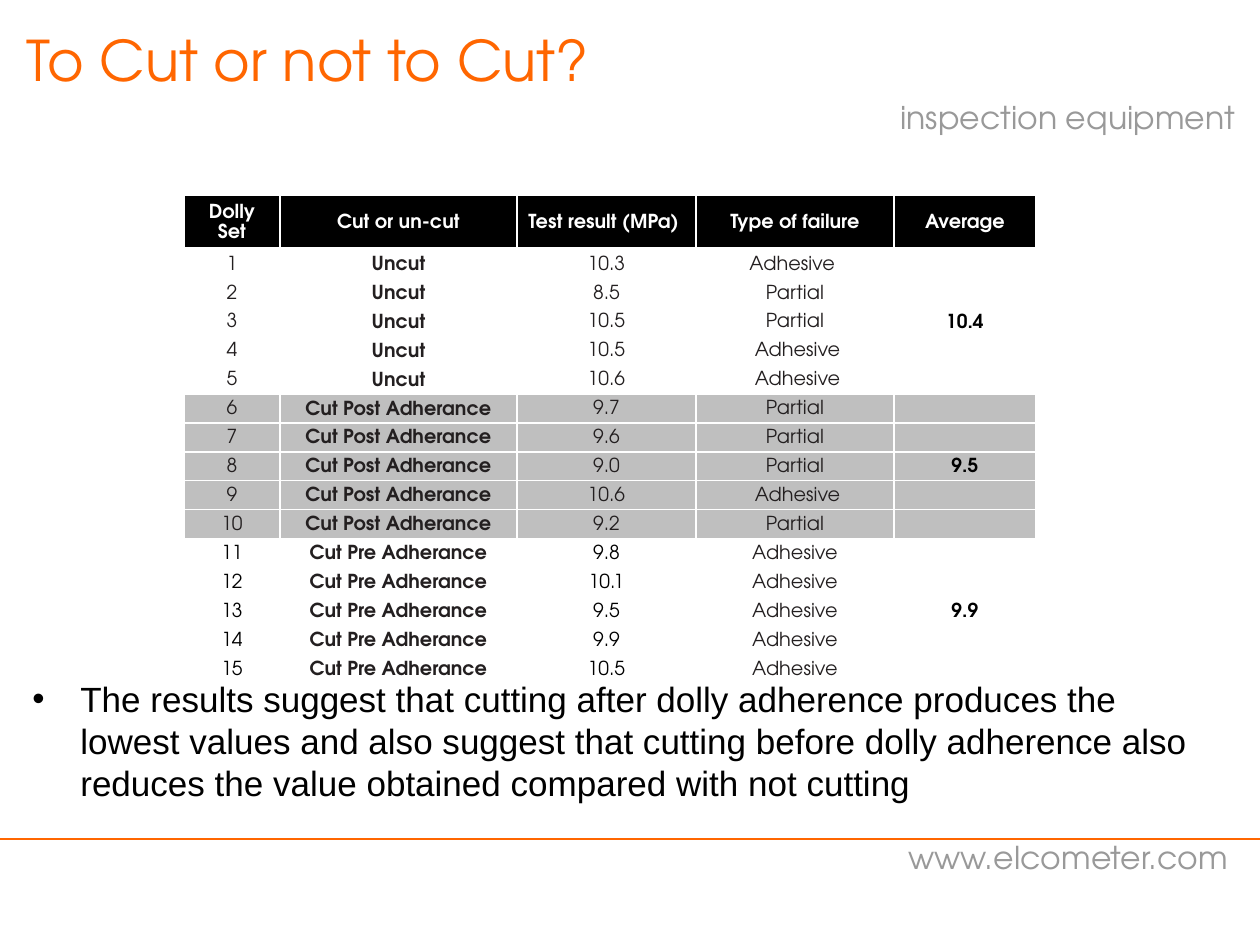
from lxml import etree
from pptx import Presentation
from pptx import util as u
from pptx.dml.color import RGBColor
from pptx.enum import shapes, text
from pptx.oxml.ns import qn

PX = 914400 // 126
SANS, BODY = "TeX Gyre Adventor", "Arial"
COLOURS = {
    "orange": "FF6600", "grey": "999999", "ink": "231F20",
    "black": "000000", "white": "FFFFFF", "band": "BFBFBF",
}


def rgb(name):
    return RGBColor.from_string(COLOURS[name])


def write(paragraph, words, size, colour, font=SANS, bold=False):
    run = paragraph.add_run()
    run.text = words
    run.font.color.rgb = rgb(colour)
    for key, value in {"name": font, "size": u.Pt(size), "bold": bold}.items():
        setattr(run.font, key, value)


prs = Presentation()
prs.slide_width, prs.slide_height = 1260 * PX, 945 * PX
slide = prs.slides.add_slide(prs.slide_layouts[5])

# Strapline and web address
for words, left, top in [("inspection equipment", 888, 92), ("www.elcometer.com", 896, 832)]:
    strap = slide.shapes.add_textbox(left * PX, top * PX, 374 * PX, 68 * PX)
    write(strap.text_frame.paragraphs[0], words, 18, "grey")

# Footer rule
rule = slide.shapes.add_connector(
    shapes.MSO_CONNECTOR.STRAIGHT, 1260 * PX, 839 * PX, 0, 839 * PX)
rule.line.color.rgb = rgb("orange")
rule.line.width = u.Pt(0.75)
etree.SubElement(rule._element.spPr, qn("a:effectLst"))

# Title
title = slide.shapes.title
for key, value in {"left": 14, "top": 16, "width": 1234, "height": 149}.items():
    setattr(title, key, value * PX)
title.text_frame.vertical_anchor = text.MSO_ANCHOR.TOP
title.text_frame.margin_top = 9 * PX
heading = title.text_frame.paragraphs[0]
heading.alignment = text.PP_ALIGN.LEFT
write(heading, "To Cut or not to Cut?", 32, "orange")

# Conclusion
conclusion = slide.shapes.add_textbox(20 * PX, 671 * PX, 1211 * PX, 140 * PX)
conclusion.text_frame.word_wrap = True
finding = conclusion.text_frame.paragraphs[0]
indent = finding._p.get_or_add_pPr()
indent.set("marL", str(48 * PX))
indent.set("indent", str(-48 * PX))
etree.SubElement(indent, qn("a:buFont")).set("typeface", BODY)
etree.SubElement(indent, qn("a:buChar")).set("char", "•")
write(finding, "The results suggest that cutting after dolly adherence produces the "
      "lowest values and also suggest that cutting before dolly adherence also "
      "reduces the value obtained compared with not cutting", 20, "black", BODY)

# Results: treatment, average, row fill, number colour, (result, failure) per dolly
header = ["Dolly Set", "Cut or un-cut", "Test result (MPa) ", "Type of failure", "Average"]
groups = [
    ("Uncut", "10.4", "white", "ink",
     [("10.3", "Adhesive "), ("8.5", "Partial"), ("10.5", "Partial"),
      ("10.5", " Adhesive"), ("10.6", " Adhesive")]),
    ("Cut Post Adherance", "9.5", "band", "ink",
     [("9.7", "Partial"), ("9.6", "Partial"), ("9.0", "Partial"),
      ("10.6", " Adhesive"), ("9.2", "Partial")]),
    ("Cut Pre Adherance", "9.9", "white", "black",
     [("9.8", "Adhesive"), ("10.1", "Adhesive"), ("9.5", "Adhesive"),
      ("9.9", "Adhesive"), ("10.5", "Adhesive")]),
]
rows = [(header, "black", ["white"] * 5)]
for treatment, average, fill, number, tests in groups:
    for i, (result, failure) in enumerate(tests):
        values = [str(len(rows)), treatment, result, failure, average if i == 2 else ""]
        rows.append((values, fill, [number, "ink", number, "ink", "black"]))

# Results table
widths = [96, 237, 179, 198, 142]
heights = [54] + [29] * (len(rows) - 1)
results = slide.shapes.add_table(
    len(rows), len(widths), 184 * PX, 195 * PX, sum(widths) * PX, sum(heights) * PX).table
for column, width in zip(results.columns, widths):
    column.width = width * PX
for r, (values, fill, colours) in enumerate(rows):
    results.rows[r].height = heights[r] * PX
    for c, (value, colour) in enumerate(zip(values, colours)):
        cell = results.cell(r, c)
        for key, setting in {"margin_left": 9 * PX, "margin_right": 9 * PX,
                             "margin_top": 0, "margin_bottom": 0,
                             "vertical_anchor": text.MSO_ANCHOR.MIDDLE}.items():
            setattr(cell, key, setting)
        entry = cell.text_frame.paragraphs[0]
        entry.alignment = text.PP_ALIGN.CENTER
        entry.line_spacing = 1.15
        if value:
            write(entry, value, 11, colour, bold=r == 0 or c in (1, 4))
        else:
            etree.SubElement(entry._p, qn("a:endParaRPr")).set("sz", "1100")
        # Borders come before the fill in the cell properties
        for side in ("lnL", "lnR", "lnT", "lnB"):
            heavy = (r, side) in ((0, "lnB"), (1, "lnT"))
            edge = etree.SubElement(cell._tc.get_or_add_tcPr(), qn(f"a:{side}"))
            edge.set("w", str(u.Pt(3 if heavy else 1)))
            paint = etree.SubElement(edge, qn("a:solidFill"))
            etree.SubElement(paint, qn("a:srgbClr")).set("val", COLOURS["white"])
        cell.fill.solid()
        cell.fill.fore_color.rgb = rgb(fill)

prs.save("out.pptx")
